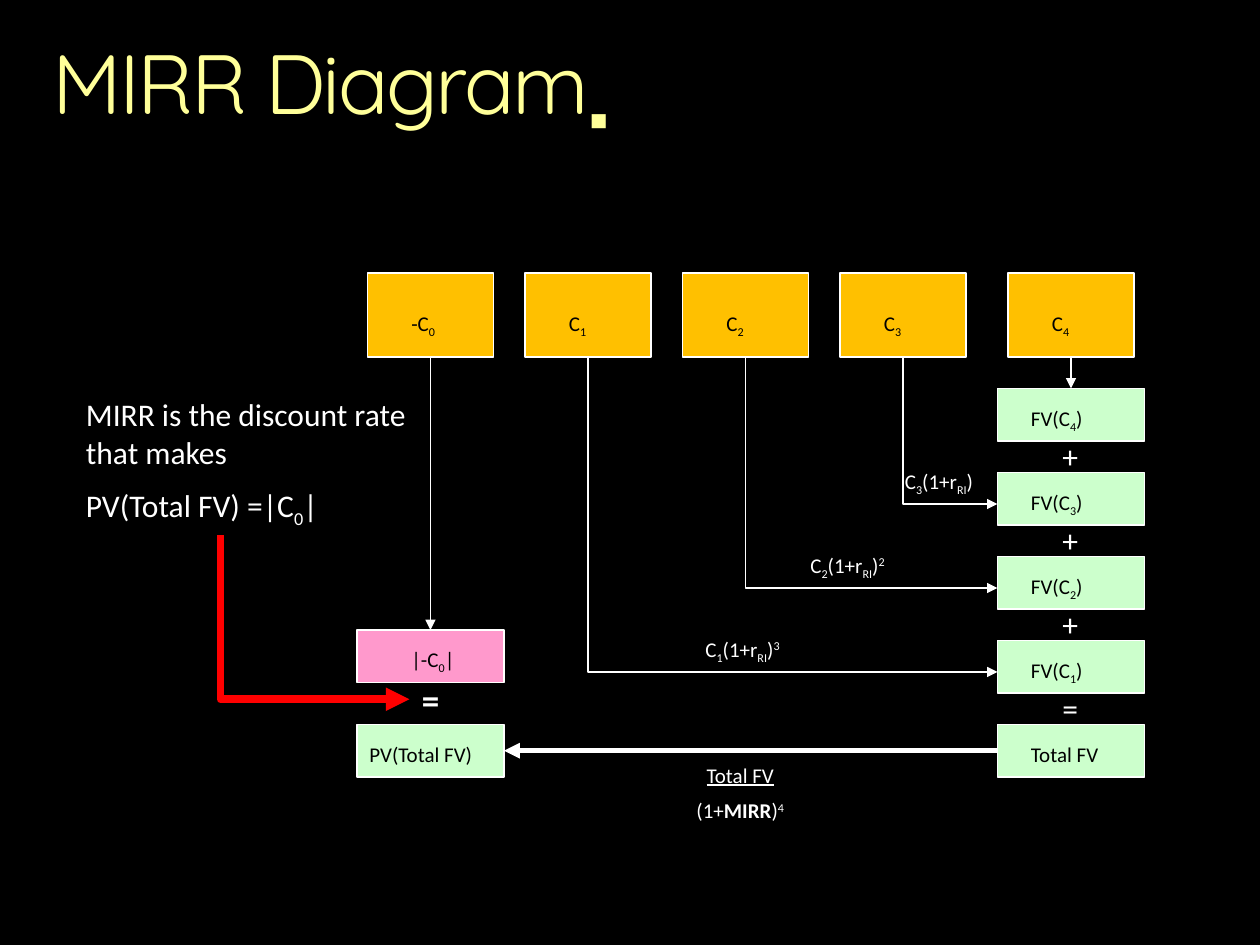
"""Build the MIRR diagram slide on a grid of 120 columns by 90 rows."""
from lxml.etree import SubElement
from pptx import Presentation
from pptx.dml.color import RGBColor
from pptx.enum.shapes import MSO_CONNECTOR, MSO_SHAPE
from pptx.enum.text import MSO_ANCHOR, MSO_AUTO_SIZE, PP_ALIGN
from pptx.oxml.ns import qn
from pptx.util import Inches, Pt

WHITE, BLACK, ORANGE, GREEN, PINK, RED = "FFFFFF", "000000", "FFC000", "CCFFCC", "FF99CC", "FF0000"
SUB, SUP = {"baseline": -25000}, {"baseline": 30000}
rgb = RGBColor.from_string

prs = Presentation()
prs.slide_width, prs.slide_height = Inches(10), Inches(7.5)
col, row = prs.slide_width / 120, prs.slide_height / 90


def place(x, y, w, h):
    return [int(v) for v in (x * col, y * row, w * col, h * row)]


def write(sp, paragraphs, color, size, font="Calibri", align=PP_ALIGN.LEFT):
    tf = sp.text_frame
    for name, value in {"word_wrap": True, "auto_size": MSO_AUTO_SIZE.SHAPE_TO_FIT_TEXT,
                        "vertical_anchor": MSO_ANCHOR.TOP}.items():
        setattr(tf, name, value)
    for i, runs in enumerate(paragraphs):
        p = tf.add_paragraph() if i else tf.paragraphs[0]
        p.alignment = align
        p.space_before = Pt(size / 2 if i else 0)
        for text, style in runs:
            r = p.add_run()
            r.text = text
            r.font.color.rgb = rgb(color)
            for name, value in {"size": Pt(size), "name": font, **style}.items():
                if name in ("baseline", "spc"):
                    r.font._element.set(name, str(value))
                else:
                    setattr(r.font, name, value)


s = prs.slides.add_slide(prs.slide_layouts[5])
s.background.fill.solid()
s.background.fill.fore_color.rgb = rgb(BLACK)

title = s.shapes.title
title.left, title.top, title.width, title.height = place(5, 3, 110, 8.8)
tf = title.text_frame
for side in ("left", "top", "right", "bottom"):
    setattr(tf, f"margin_{side}", 0)
write(title, [[("MIRR Diagram", {"spc": -150}), ("▪", {"spc": -150, **SUB})]],
      "FFFF99", 48, "Quicksand")
tf.paragraphs[0].line_spacing = 0.9

flow_cols = [35, 50, 65, 80, 96]
boxes = [(x, 26, 12, 8, ORANGE, 3, 3, 6, [("-C" if n == 0 else "C", {}), (str(n), SUB)])
         for n, x in enumerate(flow_cols)]
boxes += [(95, 69 - 8 * n, 14, 5, GREEN, 2, 1, 9, [("FV(C", {}), (str(n), SUB), (")", {})])
          for n in range(1, 5)]
boxes += [
    (95, 69, 14, 5, GREEN, 2, 1, 11, [("Total FV", {})]),
    (34, 60, 14, 5, PINK, 4, 1, 7, [("|-C", {}), ("0", SUB), ("|", {})]),
    (34, 69, 14, 5, GREEN, 0, 1, 14, [("PV(Total FV)", {})]),
]
for x, y, w, h, fill, dx, dy, label_w, runs in boxes:
    sp = s.shapes.add_shape(MSO_SHAPE.FLOWCHART_PROCESS, *place(x, y, w, h))
    sp.shadow.inherit = False
    sp.fill.solid()
    sp.fill.fore_color.rgb = rgb(fill)
    sp.line.color.rgb = rgb(WHITE)
    sp.line.width = Pt(1)
    write(s.shapes.add_textbox(*place(x + dx, y + dy, label_w, 3.6)), [runs], BLACK, 12)

arrows = [(flow_cols[n] + 6, 34, 95, 72 - 8 * n, WHITE, 1) for n in (1, 2, 3)]
arrows += [
    (41, 34, 41, 60, WHITE, 1),
    (102, 34, 102, 37, WHITE, 1),
    (95, 71.5, 48, 71.5, WHITE, 3),
    (21, 51, 39, 66.6, RED, 4.5),
]
for x1, y1, x2, y2, color, width in arrows:
    bent = x1 != x2 and y1 != y2
    kind = MSO_CONNECTOR.ELBOW if bent else MSO_CONNECTOR.STRAIGHT
    line = s.shapes.add_connector(kind, *place(x1, y1, x2, y2))
    line.line.color.rgb = rgb(color)
    line.line.width = Pt(width)
    spPr = line._element.spPr
    SubElement(spPr.find(qn("a:ln")), qn("a:tailEnd"), type="triangle")
    SubElement(spPr, qn("a:effectLst"))
    if bent:
        guides = spPr.find(qn("a:prstGeom")).find(qn("a:avLst"))
        SubElement(guides, qn("a:gd"), name="adj1", fmla="val 0")

notes = [(100, 41 + 8 * i, 4, 4.8, 18, PP_ALIGN.LEFT, [[(sign, {})]])
         for i, sign in enumerate("+++=")]
for n, x in ((1, 66), (2, 76), (3, 85)):
    runs = [("C", {}), (str(n), SUB), ("(1+r", {}), ("RI", SUB), (")", {})]
    if n < 3:
        runs.append((str(4 - n), SUP))
    notes.append((x, 68 - 8 * n, 12, 3.6, 12, PP_ALIGN.LEFT, [runs]))
notes += [
    (39, 64, 4, 5.2, 20, PP_ALIGN.LEFT, [[("=", {"bold": True})]]),
    (61, 72, 19, 7.2, 12, PP_ALIGN.CENTER, [
        [("Total FV", {"underline": True})],
        [("(1+", {}), ("MIRR", {"bold": True}), (")", {}), ("4", SUP)]]),
    (7, 37, 33, 13.8, 18, PP_ALIGN.LEFT, [
        [("MIRR is the discount rate that makes", {})],
        [("PV(Total FV) =|C", {}), ("0", SUB), ("|", {})]]),
]
for x, y, w, h, size, align, paragraphs in notes:
    write(s.shapes.add_textbox(*place(x, y, w, h)), paragraphs, WHITE, size, align=align)

prs.save("out.pptx")
